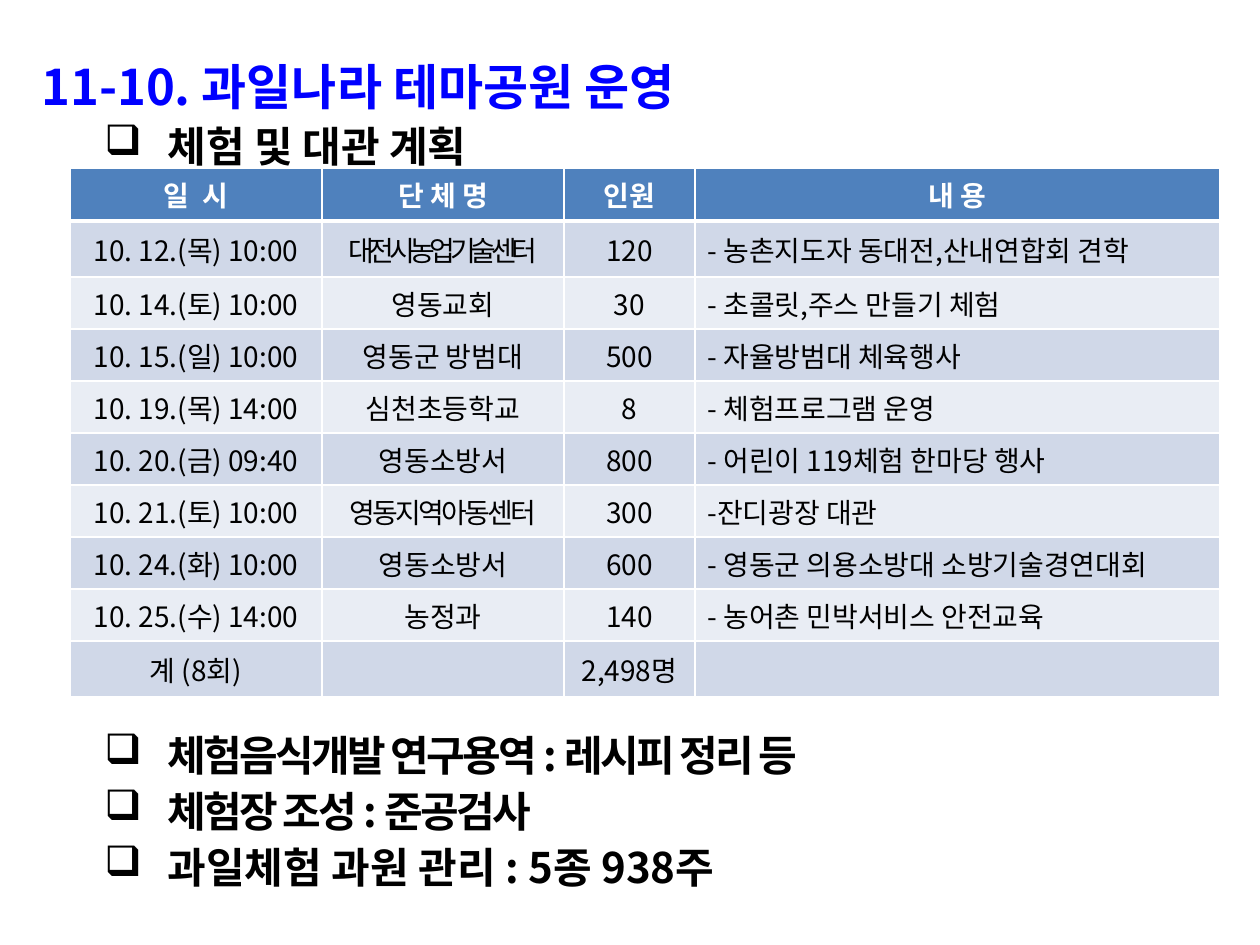
from lxml.etree import SubElement
from pptx import Presentation
from pptx.dml.color import RGBColor
from pptx.enum.text import MSO_ANCHOR, PP_ALIGN
from pptx.oxml.ns import qn
from pptx.util import Emu, Pt

EMU_PER_PX = 7257.14  # 126 px to the inch
FONT = "Noto Sans CJK KR"
WHITE, BLACK, BLUE = "FFFFFF", "000000", "0000FF"
HEADER_FILL, BAND_FILLS = "4F81BD", ("D0D8E8", "E9EDF4")

COLUMN_WIDTHS = [252, 242, 131, 525]
ROW_HEIGHTS = [53, 56] + [52] * 7 + [56]
HEADER = ("일  시", "단 체 명", "인원", "내 용")
EVENTS = [
    ("10. 12.(목) 10:00", "대전시농업기술센터", "120", "- 농촌지도자 동대전,산내연합회 견학"),
    ("10. 14.(토) 10:00", "영동교회", "30", "- 초콜릿,주스 만들기 체험"),
    ("10. 15.(일) 10:00", "영동군 방범대", "500", "- 자율방범대 체육행사"),
    ("10. 19.(목) 14:00", "심천초등학교", "8", "- 체험프로그램 운영"),
    ("10. 20.(금) 09:40", "영동소방서", "800", "- 어린이 119체험 한마당 행사"),
    ("10. 21.(토) 10:00", "영동지역아동센터", "300", "-잔디광장 대관"),
    ("10. 24.(화) 10:00", "영동소방서", "600", "- 영동군 의용소방대 소방기술경연대회"),
    ("10. 25.(수) 14:00", "농정과", "140", "- 농어촌 민박서비스 안전교육"),
    ("계 (8회)", "", "2,498명", ""),
]
TIGHT_NAMES = {"대전시농업기술센터": -3, "영동지역아동센터": -1.5}

# text, letter spacing in points, gap above in px
ITEMS = [
    ("체험 및 대관 계획", 0, 0),
    ("체험음식개발 연구용역 : 레시피 정리 등", -1.5, 553),
    ("체험장 조성 : 준공검사", -1.5, 0),
    ("과일체험 과원 관리 : 5종 938주", 0, 0),
]


def px(length):
    return Emu(round(length * EMU_PER_PX))


def color(value):
    return RGBColor.from_string(value)


def write(paragraph, text, size=16, fill=BLACK, bold=False, spacing=0, align=PP_ALIGN.LEFT):
    paragraph.alignment = align
    run = paragraph.add_run()
    run.text = text
    font = run.font
    font.name, font.size, font.bold = FONT, Pt(size), bold
    font.color.rgb = color(fill)
    properties = font._element
    SubElement(properties, qn("a:ea")).set("typeface", FONT)
    if spacing:
        properties.set("spc", str(round(spacing * 100)))


def hang(paragraph, indent, hanging, bullet=None):
    """Set a hanging indent and, if given, a bullet character."""
    properties = paragraph._p.get_or_add_pPr()
    properties.set("marL", str(px(indent)))
    properties.set("indent", str(px(-hanging)))
    if bullet:
        SubElement(properties, qn("a:buChar")).set("char", bullet)


def add_outline(slide):
    """Add the title and the bulleted items that stand around the table."""
    box = slide.shapes.add_textbox(px(29), px(39), px(1191), px(847))
    frame = box.text_frame
    frame.word_wrap = True
    title = frame.paragraphs[0]
    title.line_spacing = px(70)
    hang(title, 73, 73)
    write(title, "11-10. 과일나라 테마공원 운영", size=28, fill=BLUE, bold=True)
    for text, spacing, gap in ITEMS:
        paragraph = frame.add_paragraph()
        paragraph.level = 1
        paragraph.line_spacing = px(56)
        paragraph.space_before = px(gap)
        hang(paragraph, 126, 63, bullet="❑")
        write(paragraph, text, size=24, bold=True, spacing=spacing)


def set_borders(cell, top, bottom):
    properties = cell._tc.get_or_add_tcPr()
    for side, width in (("L", 1), ("R", 1), ("T", top), ("B", bottom)):
        line = SubElement(properties, qn(f"a:ln{side}"), w=str(Pt(width)))
        fill = SubElement(line, qn("a:solidFill"))
        SubElement(fill, qn("a:srgbClr"), val=WHITE)


def fill_cell(cell, text, row, column):
    is_header = row == 0
    set_borders(cell, top=3 if row == 1 else 1, bottom=3 if is_header else 1)
    cell.fill.solid()
    cell.fill.fore_color.rgb = color(HEADER_FILL if is_header else BAND_FILLS[(row - 1) % 2])
    cell.vertical_anchor = MSO_ANCHOR.MIDDLE
    cell.margin_top = cell.margin_bottom = px(4)
    paragraph = cell.text_frame.paragraphs[0]
    if not text:
        paragraph.font.size = Pt(16)
        return
    is_description = column == 3 and not is_header
    if is_description:
        hang(paragraph, 48, 48)
    write(paragraph, text, fill=WHITE if is_header else BLACK, bold=is_header,
          spacing=TIGHT_NAMES.get(text, 0),
          align=PP_ALIGN.LEFT if is_description else PP_ALIGN.CENTER)


def add_schedule(slide):
    rows = [HEADER] + EVENTS
    frame = slide.shapes.add_table(len(rows), len(HEADER), px(70), px(168),
                                   px(sum(COLUMN_WIDTHS)), px(sum(ROW_HEIGHTS)))
    table = frame.table
    for column, width in zip(table.columns, COLUMN_WIDTHS):
        column.width = px(width)
    for row, height in zip(table.rows, ROW_HEIGHTS):
        row.height = px(height)
    for r, texts in enumerate(rows):
        for c, text in enumerate(texts):
            fill_cell(table.cell(r, c), text, r, c)


def main():
    presentation = Presentation()
    presentation.slide_width, presentation.slide_height = px(1260), px(945)
    slide = presentation.slides.add_slide(presentation.slide_layouts[6])
    add_outline(slide)
    add_schedule(slide)
    presentation.save("out.pptx")


if __name__ == "__main__":
    main()
